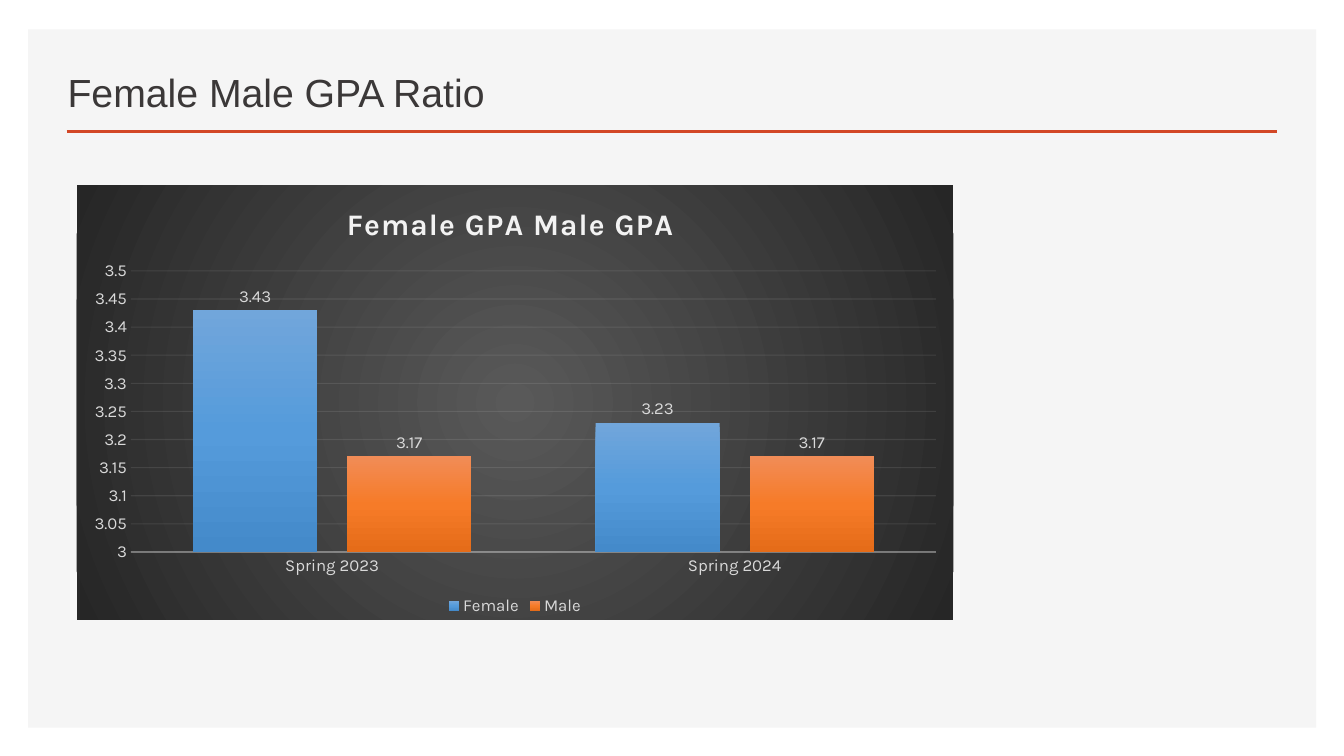
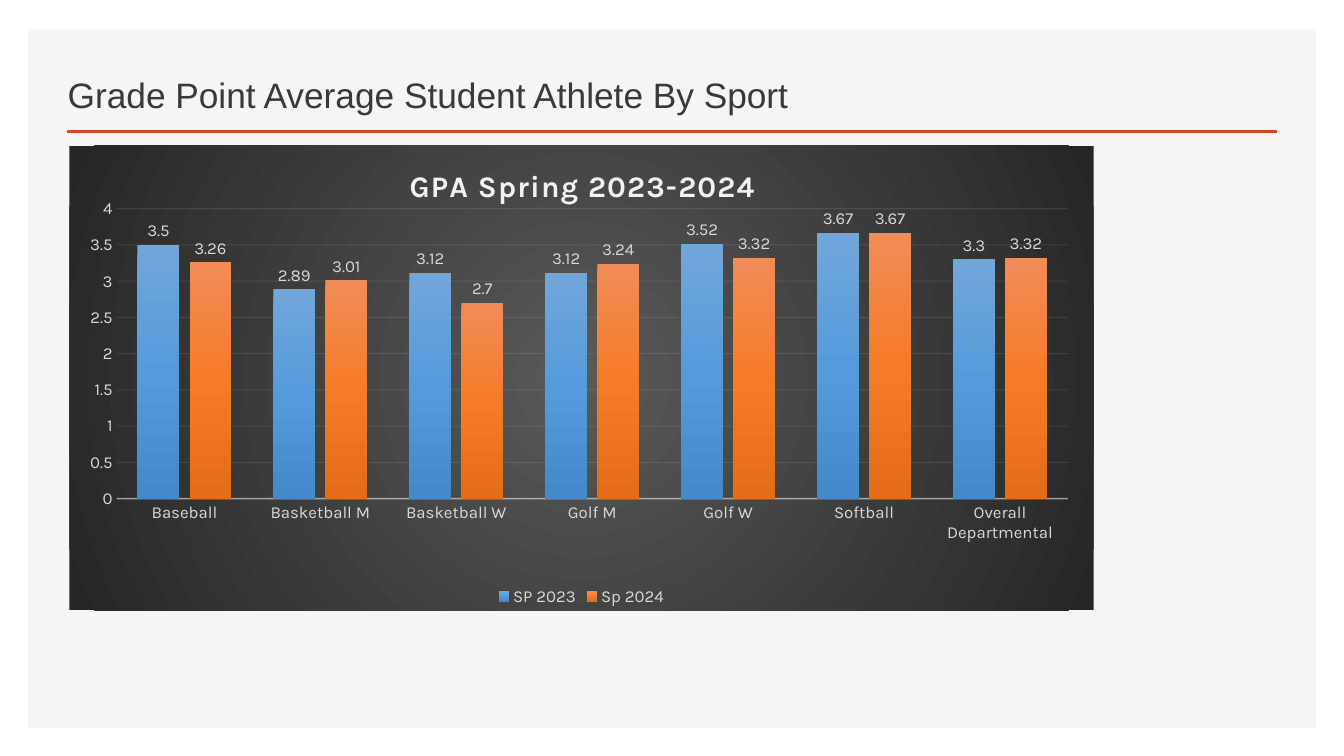
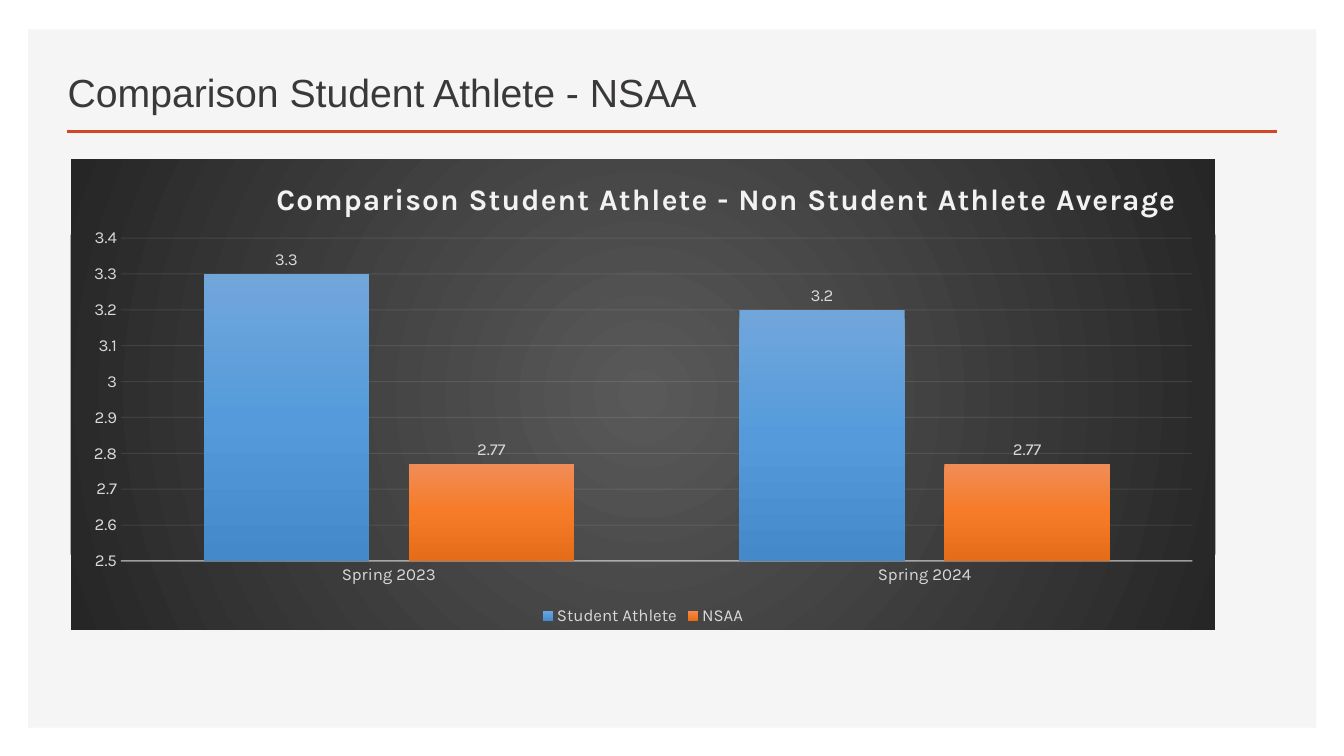
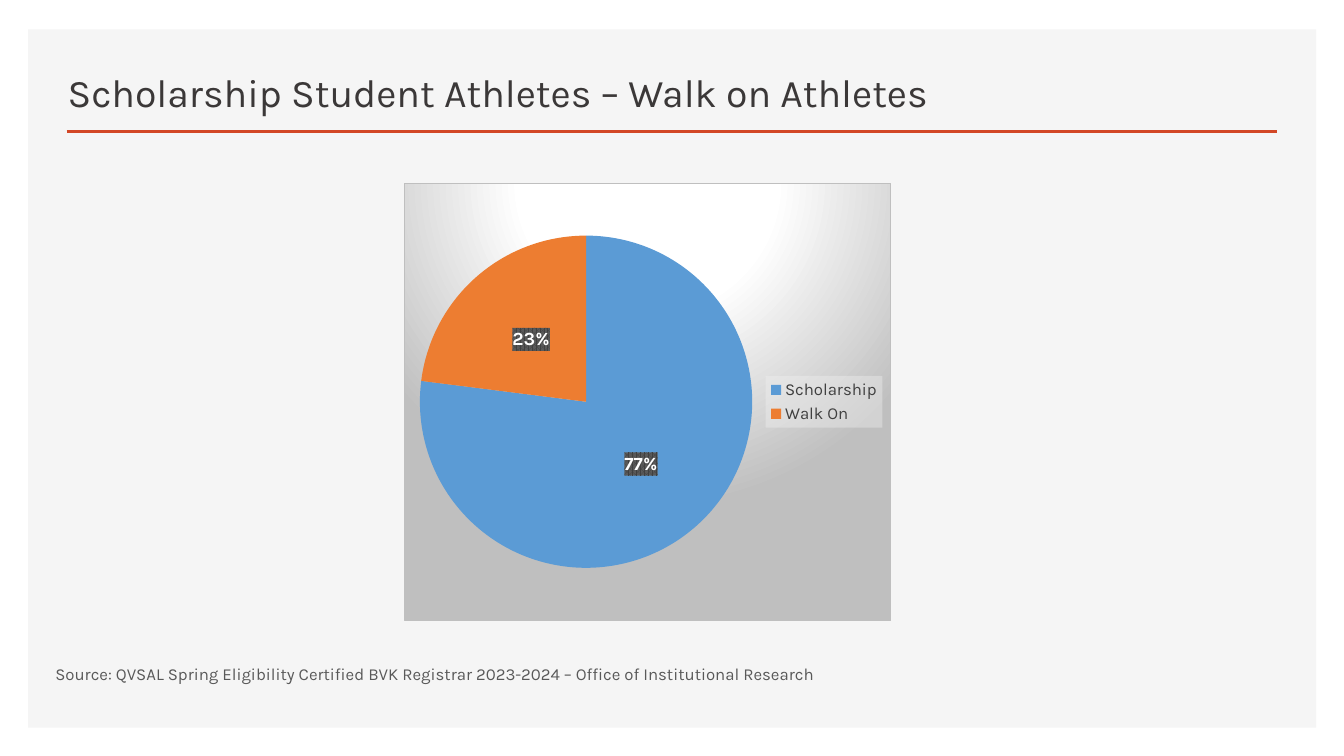
import pptx
import pptx.chart.data
import pptx.dml.color
import pptx.enum.chart
import pptx.enum.shapes
import pptx.enum.text
import pptx.oxml
import pptx.oxml.ns
import pptx.util

Cm, Pt = pptx.util.Cm, pptx.util.Pt
qn = pptx.oxml.ns.qn
XL = pptx.enum.chart

PANEL, ACCENT, INK, SOURCE_INK = "F5F5F5", "D24726", "3B3838", "595959"
PALE, LABEL, WHITE, LEGEND_INK = "F2F2F2", "D9D9D9", "FFFFFF", "404040"
SILVER = "BFBFBF"
FONT = "Karla"
BLUE = [(0, "71A6DB"), (50, "559BDB"), (100, "448ACA")]
ORANGE = [(0, "F18C57"), (50, "F67B28"), (100, "E56C19")]
SLICES = ["5B9BD5", "ED7D31"]
DARK_AREA = [(0, "595959"), (100, "262626")]
LIGHT_AREA = [(0, WHITE), (39, WHITE), (100, SILVER)]
DOWN = '<a:lin ang="5400000" scaled="0"/>'


def rgb(value):
    """Return a colour from its hex string."""
    return pptx.dml.color.RGBColor.from_string(value)


def style(font, size, color, name=FONT, bold=False):
    """Set size, colour, typeface and weight of a font."""
    font.size, font.name, font.bold = Pt(size), name, bold
    font.color.rgb = rgb(color)


def xml(tag, body):
    """Parse an element of the drawing or chart namespaces."""
    return pptx.oxml.parse_xml(f"<{tag} {pptx.oxml.ns.nsdecls('a', 'c')}>{body}</{tag}>")


def circle(left, top, right, bottom):
    """Return a circular gradient direction with its focus in percent."""
    edges = zip("ltrb", (left, top, right, bottom))
    rect = " ".join(f'{edge}="{value * 1000}"' for edge, value in edges)
    return f'<a:path path="circle"><a:fillToRect {rect}/></a:path>'


def gradient(stops, direction):
    """Return the markup of a gradient fill."""
    marks = "".join(f'<a:gs pos="{pos * 1000}"><a:srgbClr val="{color}"/></a:gs>'
                    for pos, color in stops)
    return f'<a:gradFill rotWithShape="1"><a:gsLst>{marks}</a:gsLst>{direction}</a:gradFill>'


def set_alpha(chart, query, percent):
    """Make the colours found by a query partly transparent."""
    for color in chart.element.xpath(query):
        alpha = xml("a:alpha", "")
        alpha.set("val", str(percent * 1000))
        color.append(alpha)


def place(parent, index, values, inner=False):
    """Give a chart part a manual layout in percent of the chart."""
    layout = parent.find(qn("c:layout"))
    if layout is not None:
        parent.remove(layout)
    names = ["xMode", "yMode"] + list("xywh")[:len(values)]
    settings = ["edge", "edge"] + [f"{v / 100:.3f}" for v in values]
    body = '<c:layoutTarget val="inner"/>' if inner else ""
    body += "".join(f'<c:{n} val="{v}"/>' for n, v in zip(names, settings))
    parent.insert(index, xml("c:layout", f"<c:manualLayout>{body}</c:manualLayout>"))


def dress_layout(layout, s):
    """Put the grey panel and the title rule behind every slide."""
    for ph in list(layout.placeholders)[1:]:
        ph.element.getparent().remove(ph.element)
    panel = s.shapes.add_shape(pptx.enum.shapes.MSO_SHAPE.RECTANGLE,
                               Cm(0.71), Cm(0.74), Cm(32.46), Cm(17.6))
    panel.shadow.inherit = False
    panel.fill.solid()
    panel.fill.fore_color.rgb = rgb(PANEL)
    panel.line.fill.background()
    rule = s.shapes.add_connector(pptx.enum.shapes.MSO_CONNECTOR.STRAIGHT,
                                  Cm(1.68), Cm(3.32), Cm(32.18), Cm(3.32))
    rule.line.color.rgb = rgb(ACCENT)
    rule.line.width = Pt(2)
    rule.element.spPr.append(xml("a:effectLst", ""))
    for sp in (rule, panel):
        layout.shapes.element.insert(2, sp.element)


def add_title(s, text, size=28, font="Arial", width=19.1):
    """Place and format the slide title."""
    sp = s.shapes.title
    sp.left, sp.top, sp.width, sp.height = Cm(1.45), Cm(1.25), Cm(width), Cm(1.78)
    tf = sp.text_frame
    tf.text = text
    tf.auto_size = pptx.enum.text.MSO_AUTO_SIZE.NONE
    tf.vertical_anchor = pptx.enum.text.MSO_ANCHOR.BOTTOM
    p = tf.paragraphs[0]
    p.alignment = pptx.enum.text.PP_ALIGN.LEFT
    style(p.runs[0].font, size, INK, font)


def add_chart(s, kind, box, cats, series, plot_box, area, border="<a:noFill/>"):
    """Add a chart with its background, plot position and base font."""
    data = pptx.chart.data.CategoryChartData()
    data.categories = cats
    for name, values in series:
        data.add_series(name, values)
    chart = s.shapes.add_chart(kind, *map(Cm, box), data).chart
    chart.has_title = False
    style(chart.font, 10, "000000")
    line = f'<a:ln w="9525">{border}</a:ln>'
    chart.element.find(qn("c:chart")).addnext(xml("c:spPr", area + line))
    place(chart.element.xpath(".//c:plotArea")[0], 0, plot_box, inner=True)
    return chart


def add_legend(chart, position, color):
    """Show the legend beside the plot."""
    chart.has_legend = True
    chart.legend.position = position
    chart.legend.include_in_layout = False
    style(chart.legend.font, 12, color)


def add_chart_title(chart, text, corner):
    """Write the spaced bold chart title at its corner."""
    chart.has_title = True
    tf = chart.chart_title.text_frame
    tf.text = text
    style(tf.paragraphs[0].runs[0].font, 21.3, PALE, bold=True)
    title = chart.element.xpath(".//c:title")[0]
    place(title, 1, corner)
    for props in title.xpath(".//a:r/a:rPr"):
        props.set("spc", "100")


def format_axes(chart, low, high, step):
    """Set scale, grid and labels of both axes."""
    cat, val = chart.category_axis, chart.value_axis
    for axis in (cat, val):
        axis.major_tick_mark = axis.minor_tick_mark = XL.XL_TICK_MARK.NONE
        style(axis.tick_labels.font, 12, LABEL)
    val.minimum_scale, val.maximum_scale, val.major_unit = low, high, step
    val.format.line.fill.background()
    val.has_major_gridlines = True
    for line, width in ((cat.format.line, 1), (val.major_gridlines.format.line, 0.75)):
        line.color.rgb = rgb(PALE)
        line.width = Pt(width)
    set_alpha(chart, ".//c:catAx/c:spPr//a:srgbClr", 54)
    set_alpha(chart, ".//c:majorGridlines//a:srgbClr", 10)


def column_chart(s, box, title, corner, cats, series, scale, plot_box):
    """Draw a dark clustered column chart with two series."""
    chart = add_chart(s, XL.XL_CHART_TYPE.COLUMN_CLUSTERED, box, cats, series, plot_box,
                      gradient(DARK_AREA, circle(50, 50, 50, 50)))
    add_chart_title(chart, title, corner)
    add_legend(chart, XL.XL_LEGEND_POSITION.BOTTOM, LABEL)
    format_axes(chart, *scale)
    plot = chart.plots[0]
    plot.vary_by_categories = False
    plot.gap_width, plot.overlap = 100, -24
    for ser, node, stops in zip(plot.series, chart.element.xpath(".//c:ser"), (BLUE, ORANGE)):
        ser.format.fill.background()
        node.find(qn("c:spPr")).replace(node.xpath("./c:spPr/a:noFill")[0],
                                        xml("c:spPr", gradient(stops, DOWN))[0])
        labels = ser.data_labels
        labels.show_value = True
        labels.position = XL.XL_LABEL_POSITION.OUTSIDE_END
        style(labels.font, 12, LABEL)


def pie_chart(s, box, cats, values, plot_box):
    """Draw a light pie chart with boxed percent labels."""
    border = f'<a:solidFill><a:srgbClr val="{SILVER}"/></a:solidFill>'
    chart = add_chart(s, XL.XL_CHART_TYPE.PIE, box, cats, [("Series 1", values)], plot_box,
                      gradient(LIGHT_AREA, circle(50, -80, 50, 180)), border)
    add_legend(chart, XL.XL_LEGEND_POSITION.RIGHT, LEGEND_INK)
    chart.element.xpath(".//c:legend/c:overlay")[0].addnext(
        xml("c:spPr", f'<a:solidFill><a:srgbClr val="{PALE}"/></a:solidFill>'))
    set_alpha(chart, ".//c:legend/c:spPr//a:srgbClr", 39)
    plot = chart.plots[0]
    plot.vary_by_categories = True
    ser = plot.series[0]
    for i, color in enumerate(SLICES):
        fill = ser.points[i].format.fill
        fill.solid()
        fill.fore_color.rgb = rgb(color)
    labels = ser.data_labels
    labels.show_value, labels.show_percentage = False, True
    labels.number_format, labels.number_format_is_linked = "0%", False
    labels.position = XL.XL_LABEL_POSITION.CENTER
    style(labels.font, 13.3, WHITE, bold=True)
    chart.element.xpath(".//c:dLbls/c:numFmt")[0].addnext(xml(
        "c:spPr", '<a:pattFill prst="pct75"><a:fgClr><a:srgbClr val="404040"/></a:fgClr>'
        '<a:bgClr><a:srgbClr val="595959"/></a:bgClr></a:pattFill>'))


def add_source(s, box, text):
    """Write the centred source line."""
    tf = s.shapes.add_textbox(*map(Cm, box)).text_frame
    tf.text = text
    tf.word_wrap = True
    tf.vertical_anchor = pptx.enum.text.MSO_ANCHOR.MIDDLE
    tf.margin_bottom = Cm(0.65)
    p = tf.paragraphs[0]
    p.alignment = pptx.enum.text.PP_ALIGN.CENTER
    style(p.runs[0].font, 12, SOURCE_INK)


def main():
    """Build and save the four slides."""
    prs = pptx.Presentation()
    prs.slide_width, prs.slide_height = Cm(33.87), Cm(19.05)
    layout = prs.slide_layouts[5]
    terms = ["Spring 2023", "Spring 2024"]

    s = prs.slides.add_slide(layout)
    dress_layout(layout, s)
    add_title(s, "Female Male GPA Ratio")
    column_chart(s, (1.93, 4.67, 22.1, 10.95), "Female GPA Male GPA", (30.2, 3.2), terms,
                 [("Female", (3.43, 3.23)), ("Male", (3.17, 3.17))],
                 (3, 3.5, 0.05), (6.2, 19.7, 91.8, 64.7))

    s = prs.slides.add_slide(layout)
    add_title(s, "Grade Point Average Student Athlete By Sport", 25.2)
    column_chart(s, (1.75, 3.67, 25.81, 11.71), "GPA Spring 2023-2024", (32.7, 3.3),
                 ["Baseball", "Basketball M", "Basketball W", "Golf M", "Golf W",
                  "Softball", "Overall Departmental"],
                 [("SP 2023", (3.5, 2.89, 3.12, 3.12, 3.52, 3.67, 3.3)),
                  ("Sp 2024", (3.26, 3.01, 2.7, 3.24, 3.32, 3.67, 3.32))],
                 (0, 4, 0.5), (4.6, 13.6, 92.9, 62.4))

    s = prs.slides.add_slide(layout)
    add_title(s, "Comparison Student Athlete - NSAA")
    column_chart(s, (1.78, 4.01, 28.85, 11.86),
                 "Comparison Student Athlete - Non Student Athlete Average", (17.5, 3.3), terms,
                 [("Student Athlete", (3.3, 3.2)), ("NSAA", (2.77, 2.77))],
                 (2.5, 3.4, 0.1), (4.4, 16.8, 93.6, 68.6))

    s = prs.slides.add_slide(layout)
    add_title(s, "Scholarship Student Athletes – Walk on Athletes", font=FONT, width=25.2)
    pie_chart(s, (10.19, 4.6, 12.27, 11.05), ["Scholarship", "Walk On"], (77, 23),
              (3.1, 11.9, 68.4, 76.2))
    add_source(s, (-0.53, 16.59, 22.99, 1.3),
               "Source: QVSAL Spring Eligibility Certified BVK Registrar 2023-2024 – "
               "Office of Institutional Research")
    prs.save("out.pptx")


if __name__ == "__main__":
    main()
